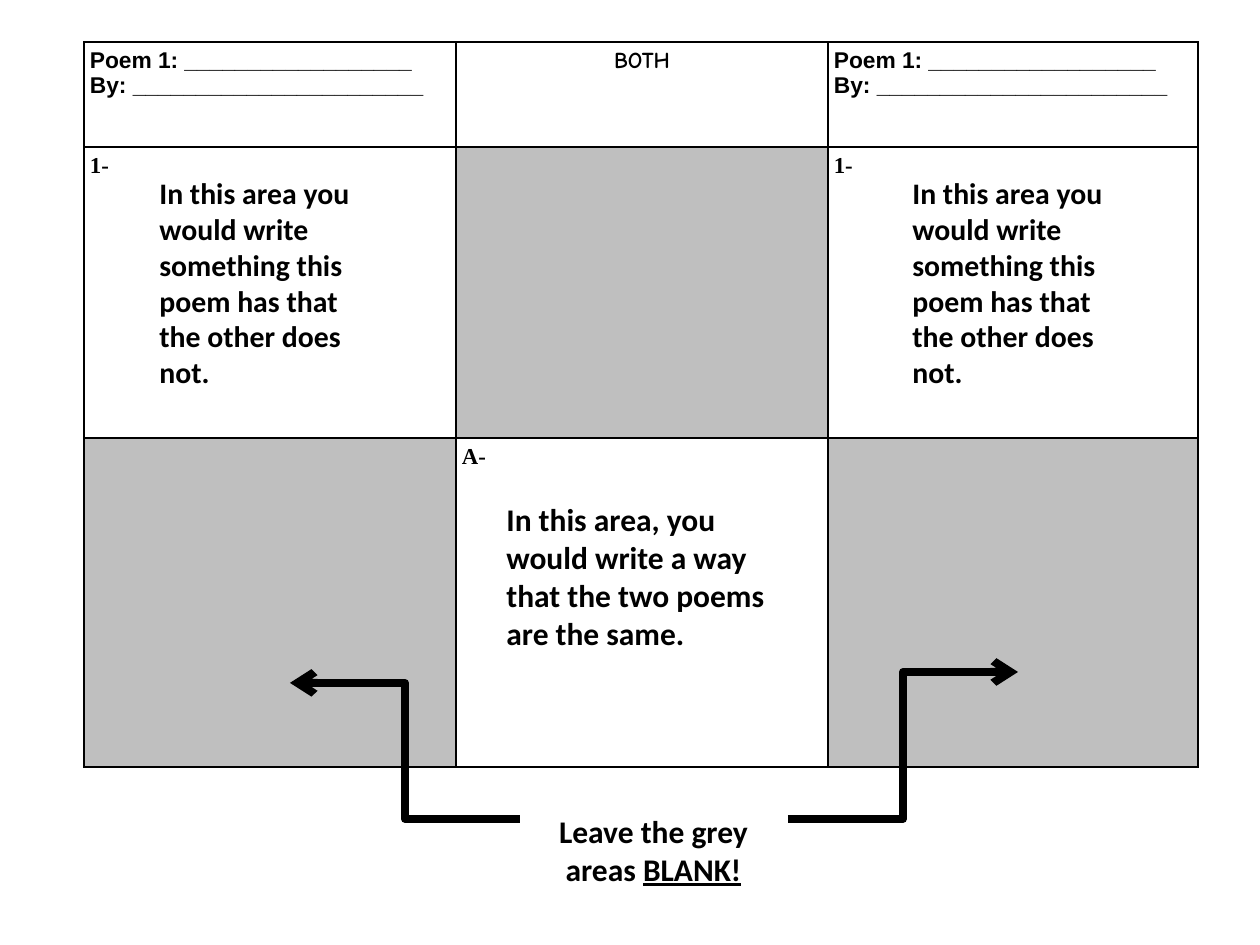
from dataclasses import dataclass

from lxml.etree import SubElement
from pptx import Presentation
from pptx.dml.color import RGBColor
from pptx.enum.shapes import MSO_CONNECTOR as Conn
from pptx.enum.text import MSO_AUTO_SIZE as AutoSize, PP_ALIGN as Align
from pptx.oxml.ns import qn
from pptx.util import Emu, Pt

SCALE = 914400 / 126


@dataclass(frozen=True)
class Theme:
    ink: RGBColor = RGBColor(0, 0, 0)
    paper: RGBColor = RGBColor(255, 255, 255)
    grey: RGBColor = RGBColor(0xBF, 0xBF, 0xBF)
    body: str = "Calibri"
    header: str = "Arial"
    both: str = "Comic Neue"
    label: str = "Times New Roman"
    cell_size: int = 13
    note_size: int = 17
    large_size: int = 18
    border: float = 0.75
    arrow: float = 4.5


T = Theme()


@dataclass(frozen=True)
class Cell:
    lines: tuple[str, ...] = ()
    font: str = T.label
    align: Align = Align.LEFT


@dataclass(frozen=True)
class Note:
    left: int
    top: int
    width: int
    height: int
    text: str
    size: int = T.large_size
    align: Align = Align.LEFT
    underlined: str = ""


@dataclass(frozen=True)
class Arrow:
    start: tuple[int, int]
    end: tuple[int, int]


POEM = Cell(("Poem 1: __________________", "By: _______________________"), T.header)
DIFFERENT = Cell(("1-",))
GREY = Cell()
COLS = (372, 372, 370)
ROWS = (105, 291, 329)
CELLS = (
    (POEM, Cell(("BOTH",), T.both, Align.CENTER), POEM),
    (DIFFERENT, GREY, DIFFERENT),
    (GREY, Cell(("A-",)), GREY),
)
DIFFERENCE = "In this area you would write something this poem has that the other does not."
SAME = "In this area, you would write a way that the two poems are the same."
NOTES = (
    Note(147, 169, 242, 229, DIFFERENCE, T.note_size),
    Note(900, 169, 242, 229, DIFFERENCE, T.note_size),
    Note(494, 494, 294, 165, SAME),
    Note(520, 806, 267, 90, "Leave the grey areas ", align=Align.CENTER, underlined="BLANK!"),
)
ARROWS = (Arrow((520, 819), (290, 683)), Arrow((788, 819), (1018, 672)))


def px(n: int) -> Emu:
    return Emu(round(n * SCALE))


def add_run(p, text: str, font: str, size: int, underline: bool = False) -> None:
    r = p.add_run()
    r.text = text
    r.font.name, r.font.size = font, Pt(size)
    r.font.bold = True
    r.font.color.rgb = T.ink
    if underline:
        r.font.underline = True


def add_borders(cell) -> None:
    tc_pr = cell._tc.get_or_add_tcPr()
    for side in ("lnL", "lnR", "lnT", "lnB"):
        ln = SubElement(tc_pr, qn(f"a:{side}"), w=str(Pt(T.border)))
        fill = SubElement(ln, qn("a:solidFill"))
        SubElement(fill, qn("a:srgbClr"), val=str(T.ink))


def fill_cell(cell, data: Cell) -> None:
    cell.margin_left = cell.margin_right = cell.margin_top = cell.margin_bottom = px(6)
    add_borders(cell)
    cell.fill.solid()
    cell.fill.fore_color.rgb = T.grey if data == GREY else T.paper
    tf = cell.text_frame
    for i, line in enumerate(data.lines):
        p = tf.add_paragraph() if i else tf.paragraphs[0]
        p.alignment = data.align
        add_run(p, line, data.font, T.cell_size)


def add_grid(s) -> None:
    frame = s.shapes.add_table(len(ROWS), len(COLS), px(84), px(42), px(sum(COLS)), px(sum(ROWS)))
    table = frame.table
    table.first_row = table.horz_banding = False
    for col, width in zip(table.columns, COLS):
        col.width = px(width)
    for row, height, cells in zip(table.rows, ROWS, CELLS):
        row.height = px(height)
        for cell, data in zip(row.cells, cells):
            fill_cell(cell, data)


def add_note(s, note: Note) -> None:
    sp = s.shapes.add_textbox(px(note.left), px(note.top), px(note.width), px(note.height))
    tf = sp.text_frame
    tf.word_wrap = True
    tf.auto_size = AutoSize.SHAPE_TO_FIT_TEXT
    p = tf.paragraphs[0]
    p.alignment = note.align
    add_run(p, note.text, T.body, note.size)
    if note.underlined:
        add_run(p, note.underlined, T.body, note.size, underline=True)


def add_arrow(s, arrow: Arrow) -> None:
    sp = s.shapes.add_connector(Conn.ELBOW, *map(px, arrow.start + arrow.end))
    sp.line.color.rgb = T.ink
    sp.line.width = Pt(T.arrow)
    SubElement(sp.line._get_or_add_ln(), qn("a:tailEnd"), type="arrow")
    SubElement(sp._element.spPr, qn("a:effectLst"))


def main() -> None:
    prs = Presentation()
    prs.slide_width, prs.slide_height = px(1260), px(945)
    s = prs.slides.add_slide(prs.slide_layouts[6])
    add_grid(s)
    for arrow in ARROWS:
        add_arrow(s, arrow)
    for note in NOTES:
        add_note(s, note)
    prs.save("out.pptx")


if __name__ == "__main__":
    main()
